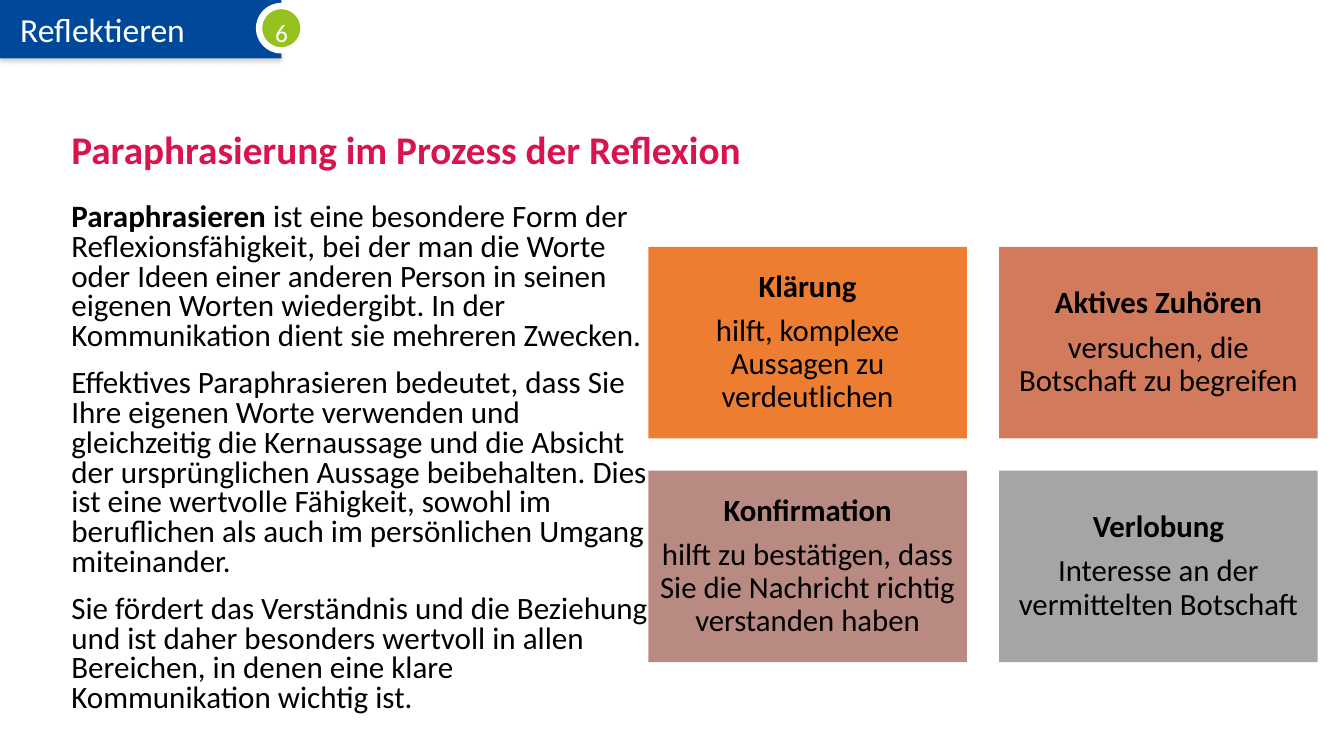
from lxml import etree
from pptx import Presentation
from pptx import util as u
from pptx.dml.color import RGBColor
from pptx.enum import shapes, text
from pptx.oxml import ns

BLUE = RGBColor(0x00, 0x48, 0x99)
GREEN = RGBColor(0x95, 0xC1, 0x1F)
PINK = RGBColor(0xD8, 0x13, 0x4D)
ORANGE = RGBColor(0xED, 0x7D, 0x31)
RUST = RGBColor(0xD1, 0x7B, 0x5C)
ROSE = RGBColor(0xB9, 0x8A, 0x82)
GREY = RGBColor(0xA5, 0xA5, 0xA5)
WHITE = RGBColor(0xFF, 0xFF, 0xFF)
BLACK = RGBColor(0, 0, 0)

MIDDLE = text.MSO_ANCHOR.MIDDLE
LEFT, CENTER = text.PP_ALIGN.LEFT, text.PP_ALIGN.CENTER


class Deck:
    face = "Calibri"

    def __init__(self, slide):
        self.slide = slide

    def shape(self, kind, box, fill, line=None):
        item = self.slide.shapes.add_shape(kind, *map(u.Inches, box))
        item.shadow.inherit = False
        item.fill.solid()
        item.fill.fore_color.rgb = fill
        if line:
            item.line.color.rgb, item.line.width = line
        else:
            item.line.fill.background()
        return item

    def label(self, box, paras, **style):
        item = self.slide.shapes.add_textbox(*map(u.Inches, box))
        self.letter(item, paras, **style)

    def shade(self, item):
        """Give a shape a soft shadow straight below it."""
        effects = item._element.spPr.find(ns.qn("a:effectLst"))
        outer = etree.SubElement(
            effects, ns.qn("a:outerShdw"), blurRad=str(u.Pt(3.1)),
            dist=str(u.Pt(1.8)), dir="5400000", algn="t", rotWithShape="0")
        color = etree.SubElement(outer, ns.qn("a:srgbClr"), val="808080")
        etree.SubElement(color, ns.qn("a:alpha"), val="35000")

    def letter(self, item, paras, size, color=BLACK, frame=None, **form):
        """Fill a shape; each paragraph is a list of (words, bold) runs."""
        body = item.text_frame
        body.word_wrap = True
        for key, value in (frame or {}).items():
            setattr(body, key, value)
        for i, runs in enumerate(paras):
            para = body.add_paragraph() if i else body.paragraphs[0]
            for key, value in form.items():
                if i or key != "space_before":
                    setattr(para, key, value)
            for words, bold in runs:
                run = para.add_run()
                run.text = words
                font = {"name": self.face, "size": u.Pt(size), "bold": bold}
                for key, value in font.items():
                    setattr(run.font, key, value)
                run.font.color.rgb = color


def main():
    prs = Presentation()
    prs.slide_width, prs.slide_height = u.Inches(13.33), u.Inches(7.5)
    deck = Deck(prs.slides.add_slide(prs.slide_layouts[6]))
    rect = shapes.MSO_SHAPE.RECTANGLE

    # Header tab and page number
    tab = deck.shape(rect, (0, 0, 2.79, 0.58), BLUE)
    deck.shade(tab)
    deck.letter(tab, [[("Reflektieren", False)]], 24, WHITE, alignment=LEFT,
                frame={"vertical_anchor": MIDDLE, "margin_left": u.Inches(0.2)})
    deck.shape(shapes.MSO_SHAPE.OVAL, (2.57, 0.06, 0.44, 0.44), GREEN,
               (WHITE, u.Pt(4.5)))
    deck.label((2.63, -0.03, 0.35, 0.51), [[("6", False)]], size=18,
               color=WHITE, line_spacing=1.5)

    # Title
    deck.label((0.61, 1.18, 12.46, 0.66),
               [[("Paraphrasierung im Prozess der Reflexion", True)]],
               size=28, color=PINK, line_spacing=0.9,
               frame={"vertical_anchor": MIDDLE})

    # Body text
    deck.label((0.61, 1.97, 5.97, 5.35), [
        [("Paraphrasieren ", True),
         ("ist eine besondere Form der Reflexionsfähigkeit, bei der man die "
          "Worte oder Ideen einer anderen Person in seinen eigenen Worten "
          "wiedergibt. In der Kommunikation dient sie mehreren Zwecken.",
          False)],
        [("Effektives Paraphrasieren bedeutet, dass Sie Ihre eigenen Worte "
          "verwenden und gleichzeitig die Kernaussage und die Absicht der "
          "ursprünglichen Aussage beibehalten. Dies ist eine wertvolle "
          "Fähigkeit, sowohl im beruflichen als auch im persönlichen Umgang "
          "miteinander.", False)],
        [("Sie fördert das Verständnis und die Beziehung und ist daher "
          "besonders wertvoll in allen Bereichen, in denen eine klare "
          "Kommunikation wichtig ist.", False)],
    ], size=22.2, line_spacing=0.8, space_before=u.Pt(6), space_after=u.Pt(6))

    # Two by two grid of purposes
    cards = [
        (ORANGE, "Klärung", "hilft, komplexe Aussagen zu verdeutlichen"),
        (RUST, "Aktives Zuhören", "versuchen, die Botschaft zu begreifen"),
        (ROSE, "Konfirmation",
         "hilft zu bestätigen, dass Sie die Nachricht richtig verstanden haben"),
        (GREY, "Verlobung", "Interesse an der vermittelten Botschaft"),
    ]
    wide, high, gap = 3.16, 1.9, 0.32
    sides = ("left", "top", "right", "bottom")
    inset = {f"margin_{side}": u.Inches(0.09) for side in sides}
    for i, (fill, head, words) in enumerate(cards):
        row, col = divmod(i, 2)
        box = (6.43 + col * (wide + gap), 2.45 + row * (high + gap), wide, high)
        card = deck.shape(rect, box, fill)
        deck.letter(card, [[(head, True)], [(words, False)]], 22,
                    frame={"vertical_anchor": MIDDLE, **inset},
                    alignment=CENTER, line_spacing=0.9, space_after=u.Pt(7.7))

    prs.save("out.pptx")


if __name__ == "__main__":
    main()
